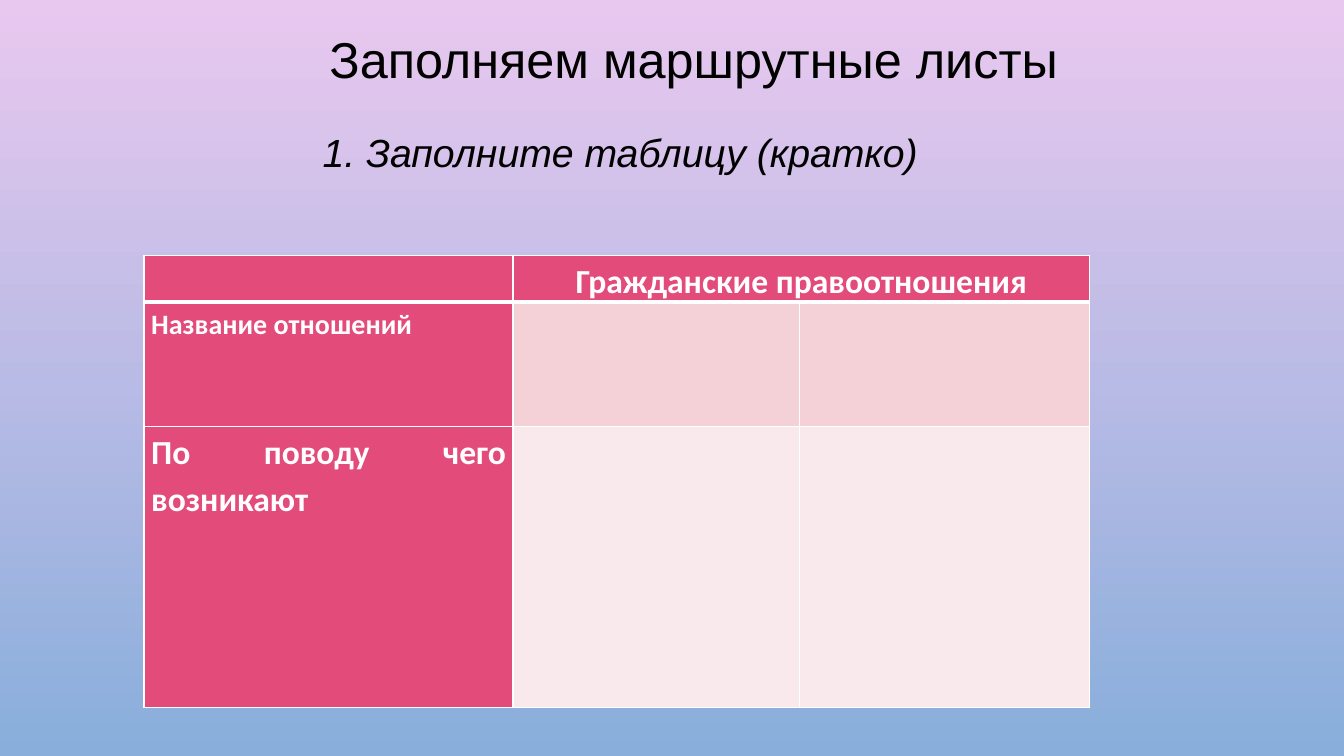
import pptx
import pptx.util
import pptx.dml.color
import pptx.enum.text
import pptx.oxml
import pptx.oxml.ns

Cm = pptx.util.Cm
Pt = pptx.util.Pt
RGBColor = pptx.dml.color.RGBColor
Align = pptx.enum.text.PP_ALIGN
Anchor = pptx.enum.text.MSO_ANCHOR
AutoSize = pptx.enum.text.MSO_AUTO_SIZE

BLACK = RGBColor(0x00, 0x00, 0x00)
WHITE = RGBColor(0xFF, 0xFF, 0xFF)
LILAC = RGBColor(0xE9, 0xC8, 0xEF)
SKY = RGBColor(0x89, 0xAE, 0xDB)
RASPBERRY = RGBColor(0xE3, 0x4B, 0x7A)
ROSE = RGBColor(0xF4, 0xD0, 0xD7)
PALE_ROSE = RGBColor(0xFA, 0xE9, 0xEC)

HEADINGS = [
    {"text": "1. Заполните таблицу (кратко)", "box": (6.63, 3.1, 19.33, 1.45),
     "frame": {"word_wrap": True, "vertical_anchor": Anchor.MIDDLE}, "indent": Cm(1.25),
     "font": {"size": Pt(28), "italic": True}},
    {"text": "Заполняем маршрутные листы", "box": (8.05, 0.58, 19.05, 1.8),
     "frame": {"word_wrap": False, "vertical_anchor": Anchor.TOP}, "indent": 0,
     "font": {"size": Pt(36)}},
]

TABLE_LEFT, TABLE_TOP = 3.63, 6.43
COLUMN_WIDTHS = [9.3, 7.21, 7.32]
ROW_HEIGHTS = [1.17, 3.12, 7.09]
CELL_TEXTS = {
    (0, 1): ("Гражданские правоотношения", 24, Align.CENTER),
    (1, 0): ("Название отношений", 20, Align.JUSTIFY),
    (2, 0): ("По поводу чего возникают", 24, Align.JUSTIFY),
}
ROW_FILLS = [RASPBERRY, ROSE, PALE_ROSE]
THIN, THICK = Pt(1), Pt(3)


def apply(target, values):
    for name, value in values.items():
        setattr(target, name, value)


def add_heading(slide, heading):
    shape = slide.shapes.add_textbox(*map(Cm, heading["box"]))
    apply(shape.text_frame, {**heading["frame"], "auto_size": AutoSize.SHAPE_TO_FIT_TEXT})
    paragraph = shape.text_frame.paragraphs[0]
    paragraph.add_run().text = heading["text"]
    if heading["indent"]:
        paragraph._p.get_or_add_pPr().set("indent", str(heading["indent"]))
    font = paragraph.runs[0].font
    apply(font, {"name": "Arial", **heading["font"]})
    font.color.rgb = BLACK


def add_borders(cell, row):
    widths = {"L": THIN, "R": THIN,
              "T": THICK if row == 1 else THIN,
              "B": THICK if row == 0 else THIN}
    properties = cell._tc.get_or_add_tcPr()
    for position, (side, width) in enumerate(widths.items()):
        properties.insert(position, pptx.oxml.parse_xml(
            f'<a:ln{side} {pptx.oxml.ns.nsdecls("a")} w="{width}">'
            f'<a:solidFill><a:srgbClr val="{WHITE}"/></a:solidFill></a:ln{side}>'))


def write_cell(cell, text, size, alignment):
    apply(cell, {"margin_left": Cm(0.18), "margin_right": Cm(0.18),
                 "margin_top": 0, "margin_bottom": 0})
    paragraph = cell.text_frame.paragraphs[0]
    apply(paragraph, {"alignment": alignment, "line_spacing": 1.15, "space_after": Pt(10)})
    run = paragraph.add_run()
    run.text = text
    apply(run.font, {"name": "Calibri", "size": Pt(size), "bold": True})
    run.font.color.rgb = WHITE


def add_relations_table(slide):
    shape = slide.shapes.add_table(
        len(ROW_HEIGHTS), len(COLUMN_WIDTHS), Cm(TABLE_LEFT), Cm(TABLE_TOP),
        Cm(sum(COLUMN_WIDTHS)), Cm(sum(ROW_HEIGHTS)))
    table = shape.table
    for column, width in zip(table.columns, COLUMN_WIDTHS):
        column.width = Cm(width)
    for row, height in zip(table.rows, ROW_HEIGHTS):
        row.height = Cm(height)
    table.cell(0, 1).merge(table.cell(0, 2))
    for row, row_fill in enumerate(ROW_FILLS):
        for column in range(len(COLUMN_WIDTHS)):
            cell = table.cell(row, column)
            cell.fill.solid()
            cell.fill.fore_color.rgb = RASPBERRY if column == 0 else row_fill
            add_borders(cell, row)
            if (row, column) in CELL_TEXTS:
                write_cell(cell, *CELL_TEXTS[row, column])


def main():
    presentation = pptx.Presentation()
    apply(presentation, {"slide_width": Cm(33.87), "slide_height": Cm(19.05)})
    slide = presentation.slides.add_slide(presentation.slide_layouts[6])
    background = slide.background.fill
    background.gradient()
    background.gradient_angle = 270
    for stop, color, position in zip(background.gradient_stops, (LILAC, SKY), (0, 1)):
        stop.color.rgb = color
        stop.position = position
    add_relations_table(slide)
    for heading in HEADINGS:
        add_heading(slide, heading)
    presentation.save("out.pptx")


if __name__ == "__main__":
    main()
